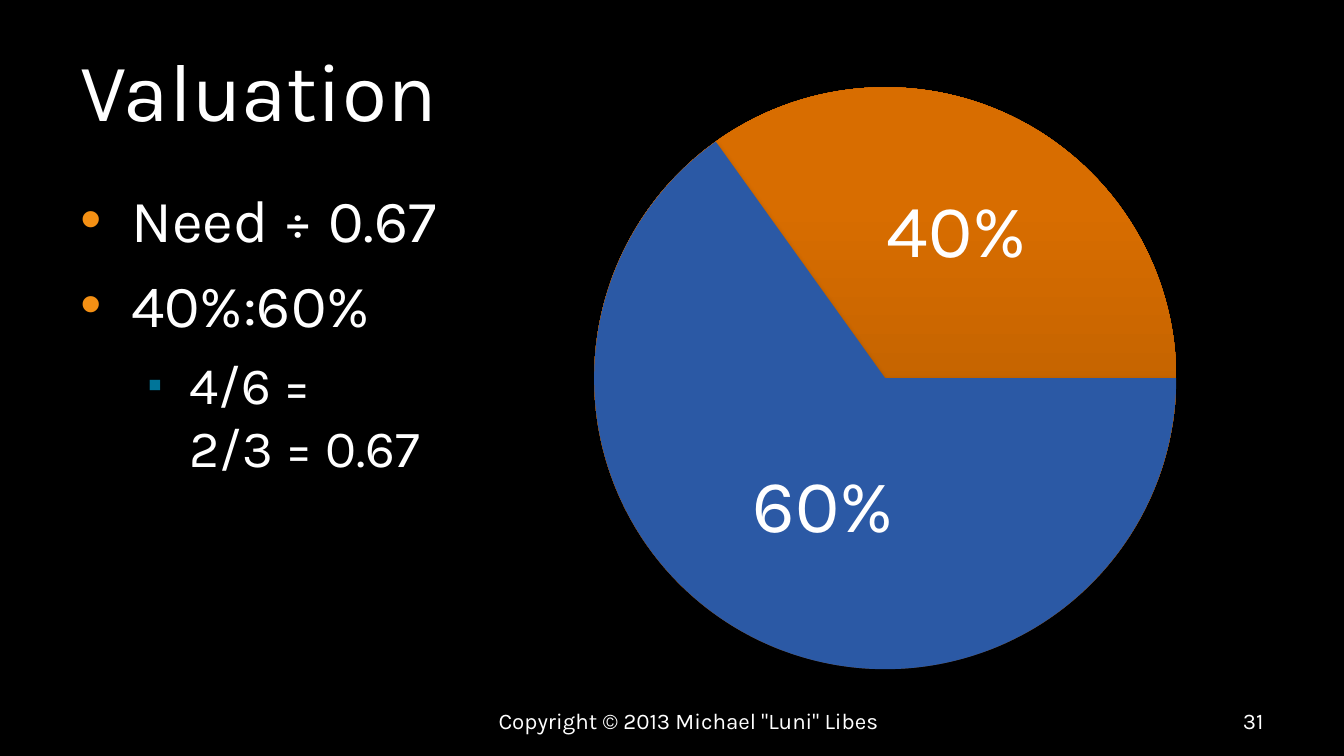
from lxml import etree
from pptx import Presentation
from pptx import util as u
from pptx.dml import color as dml_color
from pptx.enum import shapes, text
from pptx.oxml import ns

COLORS = {
    "background": "000000",
    "paper": "FFFFFF",
    "text": "FFFFFF",
    "bullet": "F49014",
    "sub_bullet": "007599",
    "need_dark": "A65400",
    "need": "D86D00",
    "rest": "2B59A5",
}


def rgb(name):
    return dml_color.RGBColor.from_string(COLORS[name])


def add_text(paragraph, content, size):
    for index, line in enumerate(content.split("\n")):
        if index:
            paragraph.add_line_break()
        run = paragraph.add_run()
        run.text = line
        run.font.name = "Karla"
        run.font.size = u.Pt(size)
        run.font.color.rgb = rgb("text")


presentation = Presentation()
presentation.slide_width = u.Cm(25.4)
presentation.slide_height = u.Cm(14.29)
slide = presentation.slides.add_slide(presentation.slide_layouts[6])
slide.background.fill.solid()
slide.background.fill.fore_color.rgb = rgb("paper")

panels = []
for top, height in ((13.02, 1.27), (0, 3.02), (0, 14.29)):
    panel = slide.shapes.add_shape(
        shapes.MSO_SHAPE.RECTANGLE, 0, u.Cm(top), presentation.slide_width, u.Cm(height)
    )
    panel.fill.solid()
    panel.fill.fore_color.rgb = rgb("background")
    panels.append(panel)

pie_box = [u.Cm(value) for value in (11.23, 1.65, 11, 11)]
need_circle = slide.shapes.add_shape(shapes.MSO_SHAPE.OVAL, *pie_box)
need_circle.fill.gradient()
need_circle.fill.gradient_angle = 90
stops = need_circle.fill.gradient_stops
for stop, position, name in zip(stops, (0, 0.8), ("need_dark", "need")):
    stop.position = position
    stop.color.rgb = rgb(name)

rest_slice = slide.shapes.add_shape(shapes.MSO_SHAPE.PIE, *pie_box)
rest_slice.adjustments[0] = 0
rest_slice.adjustments[1] = 140.64
rest_slice.fill.solid()
rest_slice.fill.fore_color.rgb = rgb("rest")

for shape in (*panels, need_circle, rest_slice):
    shape.shadow.inherit = False
    shape.line.fill.background()

for shape in (panels[-1], need_circle, rest_slice):
    effects = shape._element.spPr.find(ns.qn("a:effectLst"))
    shadow = etree.SubElement(
        effects, ns.qn("a:outerShdw"), blurRad=str(u.Pt(3.1)), dist=str(u.Pt(1.8)),
        dir="5400000", rotWithShape="0",
    )
    shadow_color = etree.SubElement(shadow, ns.qn("a:srgbClr"), val=COLORS["background"])
    etree.SubElement(shadow_color, ns.qn("a:alpha"), val="35000")

left, middle, right = text.PP_ALIGN.LEFT, text.PP_ALIGN.CENTER, text.PP_ALIGN.RIGHT
top_anchor, middle_anchor = text.MSO_ANCHOR.TOP, text.MSO_ANCHOR.MIDDLE
labels = [
    ("Valuation", 44, (1.27, 0.48, 22.86, 2.39), left, middle_anchor),
    ("60%", 40, (13.97, 8.53, 3.68, 1.96), left, top_anchor),
    ("40%", 40, (16.51, 3.33, 3.81, 1.96), left, top_anchor),
    ('Copyright © 2013 Michael "Luni" Libes', 12, (8.25, 13.24, 9.53, 0.76), middle, middle_anchor),
    ("31", 12, (18.21, 13.24, 5.92, 0.76), right, middle_anchor),
]
for content, size, box, alignment, anchor in labels:
    frame = slide.shapes.add_textbox(*[u.Cm(value) for value in box]).text_frame
    frame.word_wrap = True
    frame.vertical_anchor = anchor
    frame.paragraphs[0].alignment = alignment
    add_text(frame.paragraphs[0], content, size)

bullets = [
    ("Need ÷ 0.67", 32, 0, 0.96, 0.96, "•", "bullet", 100),
    ("40%:60%", 32, 0, 0.96, 0.96, "•", "bullet", 100),
    ("4/6 =\n2/3 = 0.67", 28, 1, 2.06, 0.79, "▪", "sub_bullet", 80),
]
body_box = [u.Cm(value) for value in (1.27, 3.33, 22.86, 9.42)]
body = slide.shapes.add_textbox(*body_box).text_frame
body.word_wrap = True
for index, (content, size, level, margin, hanging, mark, color, scale) in enumerate(bullets):
    paragraph = body.add_paragraph() if index else body.paragraphs[0]
    paragraph.level = level
    paragraph.space_after = u.Pt(7)
    properties = paragraph._p.get_or_add_pPr()
    properties.set("marL", str(u.Cm(margin)))
    properties.set("indent", str(-u.Cm(hanging)))
    bullet_color = etree.SubElement(properties, ns.qn("a:buClr"))
    etree.SubElement(bullet_color, ns.qn("a:srgbClr"), val=COLORS[color])
    etree.SubElement(properties, ns.qn("a:buSzPct"), val=str(scale * 1000))
    etree.SubElement(properties, ns.qn("a:buFont"), typeface="Arial")
    etree.SubElement(properties, ns.qn("a:buChar"), char=mark)
    add_text(paragraph, content, size)

presentation.save("out.pptx")
